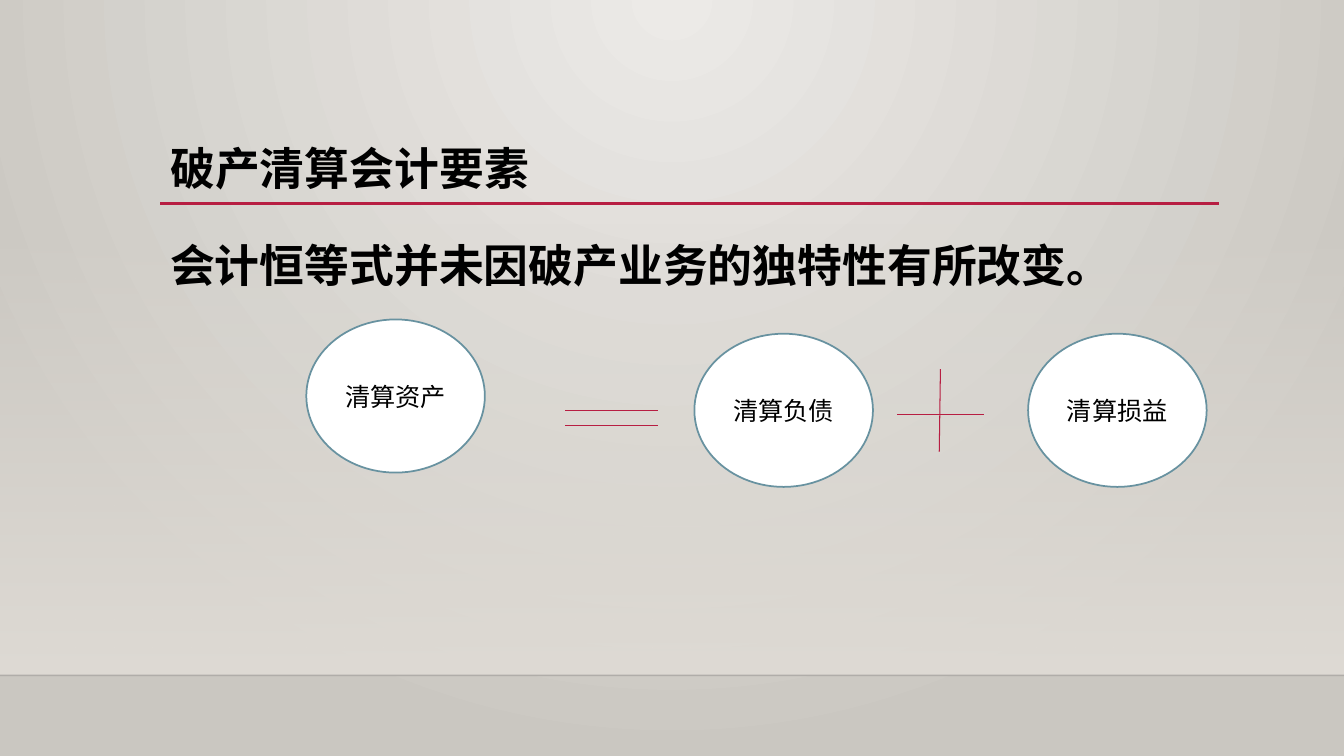
"""Build a slide on the accounting equation in bankruptcy liquidation."""
from lxml import etree
from pptx import Presentation
from pptx.dml.color import RGBColor
from pptx.enum import shapes, text
from pptx.oxml import ns
from pptx.util import Cm, Pt

TITLE = "破产清算会计要素"
CLAIM = "会计恒等式并未因破产业务的独特性有所改变。"
FONT = "Noto Sans CJK SC"
RED, BLACK, WHITE, BLUE = "B71E42", "000000", "FFFFFF", "6892A0"
WIDE, HIGH, FLOOR = 33.87, 19.05, 17.02
LEFT = 4.04
OVAL = (4.5, 3.86)
TERMS = [("清算资产", 7.72, 8.05), ("清算负债", 17.5, 8.41), ("清算损益", 25.91, 8.41)]
EQUALS = [(14.25, y, 16.59, y) for y in (10.34, 10.72)]
PLUS = [(22.61, 10.44, 24.79, 10.44), (23.7, 9.3, 23.67, 11.38)]


def color(code):
    return RGBColor.from_string(code)


def add(node, tag, **attrs):
    return etree.SubElement(node, ns.qn(tag), attrs)


def fade(node, val):
    add(node.find(".//" + ns.qn("a:srgbClr")), "a:alpha", val=val)


def blend(fill, codes):
    fill.gradient()
    for stop, code, place in zip(fill.gradient_stops, codes, (0, 1)):
        stop.color.rgb = color(code)
        stop.position = place


def write(frame, words, size, bold=False):
    frame.text = words
    frame.word_wrap = True
    para = frame.paragraphs[0]
    font = para.runs[0].font
    font.name, font.size, font.bold = FONT, Pt(size), bold
    font.color.rgb = color(BLACK)
    add(para.runs[0]._r.get_or_add_rPr(), "a:ea", typeface=FONT)
    return para


def rule(slide, ends, code, width):
    line = slide.shapes.add_connector(
        shapes.MSO_CONNECTOR.STRAIGHT, *[Cm(v) for v in ends])
    line.line.color.rgb = color(code)
    line.line.width = Pt(width)
    add(line._element.spPr, "a:effectLst")
    return line


def backdrop(slide):
    blend(slide.background.fill, ("ECEAE7", "CAC7C1"))
    grad = slide._element.find(".//" + ns.qn("a:gradFill"))
    grad.remove(grad.find(ns.qn("a:lin")))
    way = add(grad, "a:path", path="circle")
    add(way, "a:fillToRect", l="43000", t="0", r="43000", b="100000")

    wall = slide.shapes.add_shape(
        shapes.MSO_SHAPE.RECTANGLE, 0, Cm(5.61), Cm(WIDE), Cm(FLOOR - 5.61))
    wall.shadow.inherit = False
    wall.line.fill.background()
    blend(wall.fill, ("DFDBD5", "DFDBD5"))
    wall.fill.gradient_angle = 270
    fade(wall._element.spPr, "0")
    edge = rule(slide, (0, FLOOR, WIDE, FLOOR), "000001", 1)
    fade(edge._element.spPr, "20000")


def head(slide):
    box = slide.shapes.title
    box.left, box.top, box.width, box.height = Cm(LEFT), Cm(2.24), Cm(26.67), Cm(2.92)
    para = write(box.text_frame, TITLE, 32, True)
    para.alignment = text.PP_ALIGN.LEFT
    para.line_spacing = 0.9
    box.text_frame.vertical_anchor = text.MSO_ANCHOR.BOTTOM
    box.text_frame.margin_bottom = Cm(0.25)
    rule(slide, (LEFT, 5.13, 30.73, 5.13), RED, 2.5)


def term(slide, words, x, y):
    oval = slide.shapes.add_shape(
        shapes.MSO_SHAPE.OVAL, Cm(x), Cm(y), *[Cm(v) for v in OVAL])
    oval.shadow.inherit = False
    oval.fill.solid()
    oval.fill.fore_color.rgb = color(WHITE)
    oval.line.color.rgb = color(BLUE)
    oval.line.width = Pt(1.25)
    write(oval.text_frame, words, 18).alignment = text.PP_ALIGN.CENTER
    oval.text_frame.vertical_anchor = text.MSO_ANCHOR.MIDDLE


def main():
    deck = Presentation()
    deck.slide_width, deck.slide_height = Cm(WIDE), Cm(HIGH)
    slide = deck.slides.add_slide(deck.slide_layouts[5])
    backdrop(slide)
    head(slide)
    for item in TERMS:
        term(slide, *item)
    for ends in EQUALS + PLUS:
        rule(slide, ends, RED, 0.75)
    box = slide.shapes.add_textbox(Cm(LEFT), Cm(5.87), Cm(23.62), Cm(1.63))
    write(box.text_frame, CLAIM, 32, True)
    box.text_frame.auto_size = text.MSO_AUTO_SIZE.SHAPE_TO_FIT_TEXT
    deck.save("out.pptx")


if __name__ == "__main__":
    main()
